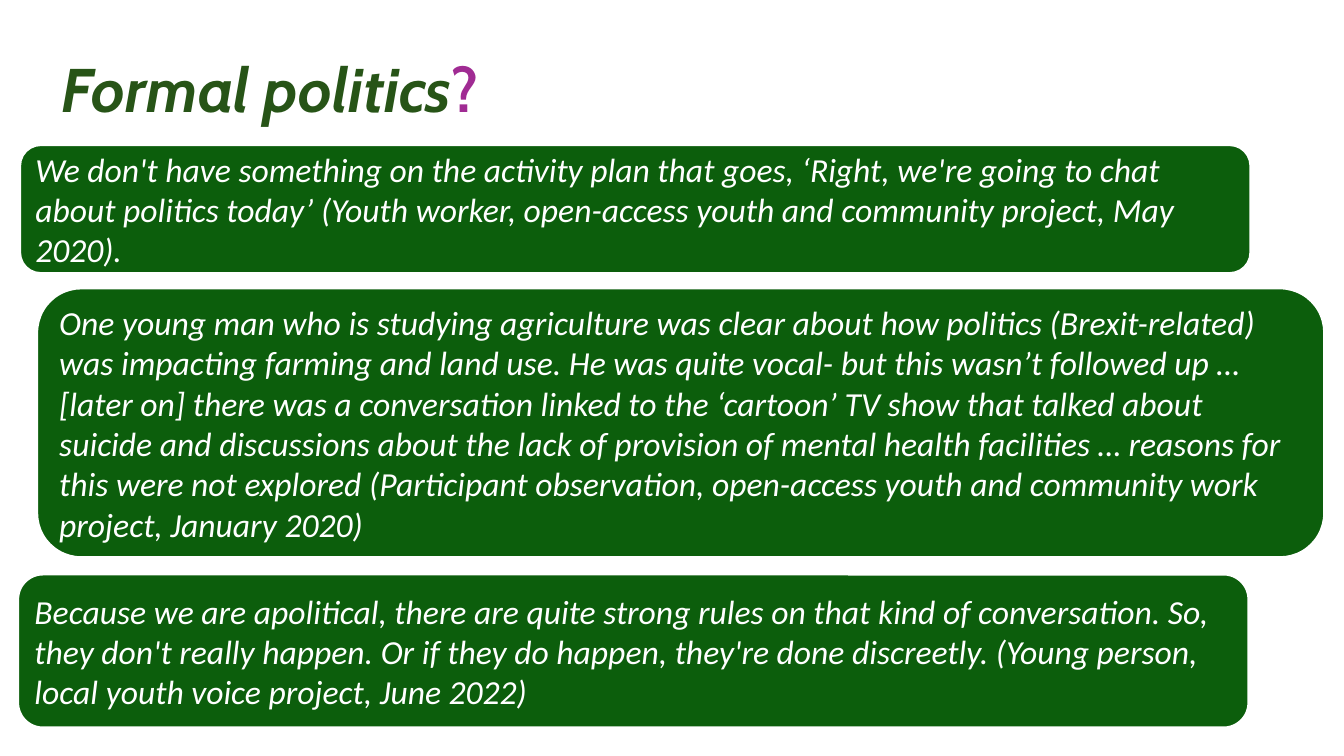
from pptx import Presentation
from pptx import util as u
from pptx.dml.color import RGBColor
from pptx.enum import shapes, text

DARK_GREEN = RGBColor(0x27, 0x54, 0x17)
PURPLE = RGBColor(0xA0, 0x2B, 0x93)
QUOTE_GREEN = RGBColor(0x0C, 0x5E, 0x0C)
WHITE = RGBColor(0xFF, 0xFF, 0xFF)

TITLE_BOX = (1.3, 1.02, 30.23, 2.62)
TITLE_RUNS = [("Formal politics", DARK_GREEN, True), ("?", PURPLE, False)]

# Quote text with left, top, width and height in centimetres
QUOTES = [
    ("We don't have something on the activity plan that goes, ‘Right, we're going to chat "
     "about politics today’ (Youth worker, open-access youth and community project, May 2020).",
     (0.48, 3.63, 31.06, 3.28)),
    ("One young man who is studying agriculture was clear about how politics (Brexit-related) "
     "was impacting farming and land use. He was quite vocal- but this wasn’t followed up … "
     "[later on] there was a conversation linked to the ‘cartoon’ TV show that talked about "
     "suicide and discussions about the lack of provision of mental health facilities … "
     "reasons for this were not explored (Participant observation, open-access youth and "
     "community work project, January 2020)",
     (0.91, 7.24, 32.49, 6.83)),
    ("Because we are apolitical, there are quite strong rules on that kind of conversation. So, "
     "they don't really happen. Or if they do happen, they're done discreetly. (Young person, "
     "local youth voice project, June 2022)",
     (0.43, 14.45, 31.06, 3.91)),
]


def lengths(box):
    return [u.Cm(value) for value in box]


def add_run(paragraph, words, color, **formats):
    run = paragraph.add_run()
    run.text = words
    run.font.color.rgb = color
    for name, value in formats.items():
        setattr(run.font, name, value)


def add_title(slide):
    title = slide.shapes.title
    title.left, title.top, title.width, title.height = lengths(TITLE_BOX)
    title.text_frame.vertical_anchor = text.MSO_ANCHOR.MIDDLE
    paragraph = title.text_frame.paragraphs[0]
    paragraph.alignment = text.PP_ALIGN.LEFT
    paragraph.line_spacing = 0.9
    for words, color, italic in TITLE_RUNS:
        add_run(paragraph, words, color, name="Cabin", size=u.Pt(44), bold=True, italic=italic)


def add_quote(slide, words, box):
    shape = slide.shapes.add_shape(shapes.MSO_SHAPE.ROUNDED_RECTANGLE, *lengths(box))
    shape.shadow.inherit = False
    shape.fill.solid()
    shape.fill.fore_color.rgb = QUOTE_GREEN
    shape.line.color.rgb = WHITE
    shape.line.width = u.Pt(3)
    frame = shape.text_frame
    frame.word_wrap = True
    frame.vertical_anchor = text.MSO_ANCHOR.MIDDLE
    paragraph = frame.paragraphs[0]
    paragraph.alignment = text.PP_ALIGN.LEFT
    add_run(paragraph, words, WHITE, name="Calibri", size=u.Pt(24), italic=True)


def main():
    presentation = Presentation()
    presentation.slide_width = u.Cm(33.87)
    presentation.slide_height = u.Cm(19.05)
    slide = presentation.slides.add_slide(presentation.slide_layouts.get_by_name("Title Only"))
    add_title(slide)
    for words, box in QUOTES:
        add_quote(slide, words, box)
    presentation.save("out.pptx")


if __name__ == "__main__":
    main()
